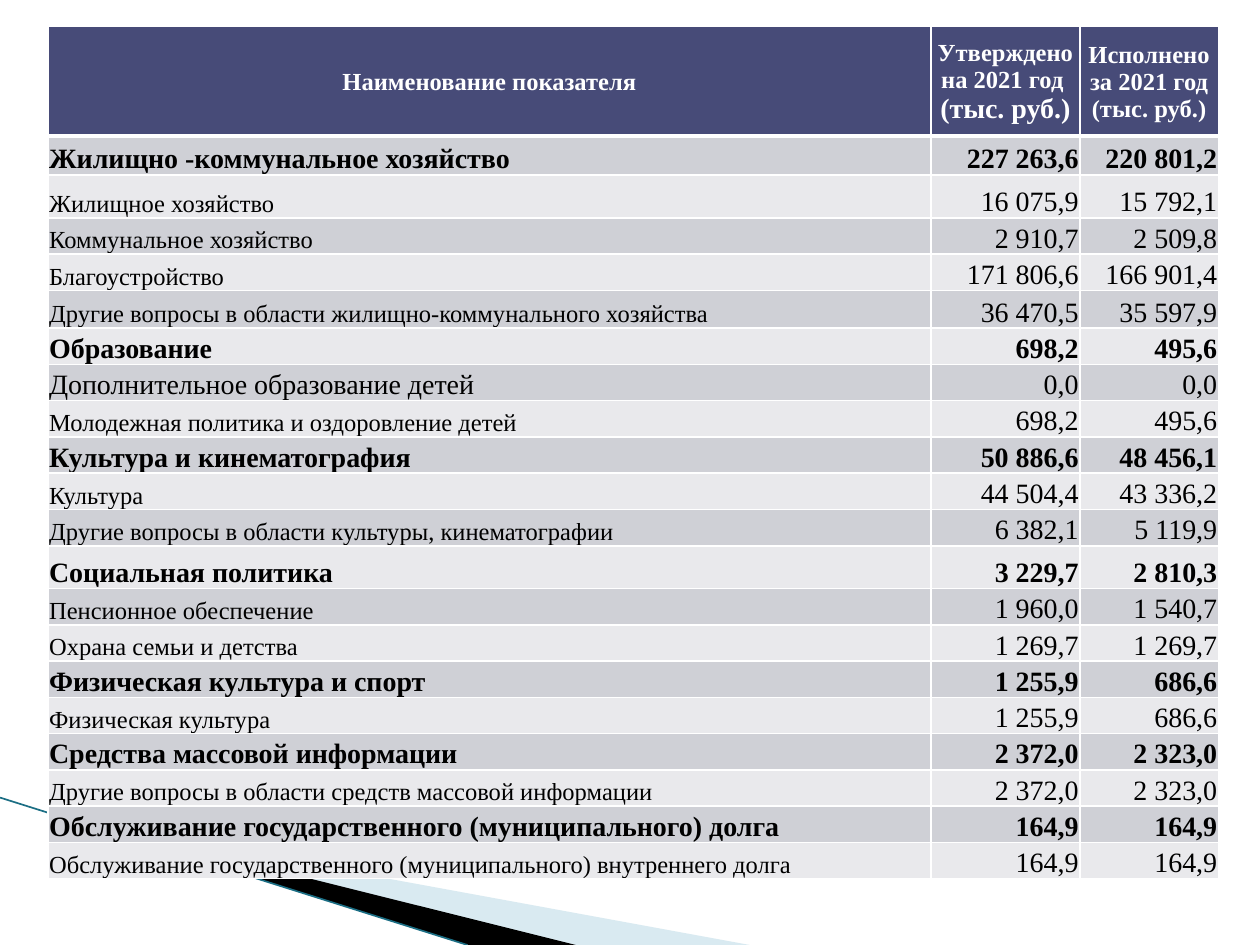
"""Build a slide with a budget spending table over a pointed corner motif."""
from dataclasses import dataclass

from lxml import etree
from pptx import Presentation, util as u
from pptx.dml.color import RGBColor
from pptx.enum import shapes, text
from pptx.oxml.ns import qn

FONT = "Times New Roman"
UNIT = u.Inches(0.1)
HUES = {"head": "474B78", "odd": "CFD0D6", "even": "E9E9EC", "white": "FFFFFF",
        "black": "000000", "pale": "A0CBDC", "teal": "1B6E84"}
WIDTHS = (70.1, 11.8, 11)
LEFT, TOP, TALL = 3.8, 2.1, 8.7


@dataclass
class Row:
    name: str
    plan: str
    fact: str
    bold: bool = False
    size: int = 14
    high: float = 2.88


@dataclass
class Wedge:
    hue: str
    dots: tuple
    alpha: int = 100


ROWS = [
    Row("Жилищно -коммунальное хозяйство", "227 263,6", "220 801,2", True, 16, 3.1),
    Row("Жилищное хозяйство", "16 075,9", "15 792,1", high=3.4),
    Row("Коммунальное хозяйство", "2 910,7", "2 509,8"),
    Row("Благоустройство", "171 806,6", "166 901,4"),
    Row("Другие вопросы в области жилищно-коммунального хозяйства",
        "36 470,5", "35 597,9", high=3),
    Row("Образование", "698,2", "495,6", True, 16),
    Row("Дополнительное образование детей", "0,0", "0,0", size=16),
    Row("Молодежная политика и оздоровление детей", "698,2", "495,6"),
    Row("Культура и кинематография", "50 886,6", "48 456,1", True, 16),
    Row("Культура", "44 504,4", "43 336,2"),
    Row("Другие вопросы в области культуры, кинематографии", "6 382,1", "5 119,9"),
    Row("Социальная политика", "3 229,7", "2 810,3", True, 16, 3.4),
    Row("Пенсионное обеспечение", "1 960,0", "1 540,7"),
    Row("Охрана семьи и детства", "1 269,7", "1 269,7"),
    Row("Физическая культура и спорт", "1 255,9", "686,6", True, 16),
    Row("Физическая культура", "1 255,9", "686,6"),
    Row("Средства массовой информации", "2 372,0", "2 323,0", True, 16),
    Row("Другие вопросы в области средств массовой информации", "2 372,0", "2 323,0"),
    Row("Обслуживание государственного (муниципального) долга",
        "164,9", "164,9", True, 16),
    Row("Обслуживание государственного (муниципального) внутреннего долга",
        "164,9", "164,9"),
]
WEDGES = [
    Wedge("pale", ((5.5, 65.1), (59.5, 75), (45.6, 75), (5.5, 65)), 40),
    Wedge("black", ((5.3, 64.9), (45.7, 75), (37.2, 75), (5.4, 65))),
]


def span(size: float) -> int:
    return round(size * UNIT)


def tint(hue: str) -> RGBColor:
    return RGBColor.from_string(HUES[hue])


def draw_wedge(slide, wedge: Wedge) -> None:
    dots = [(span(x), span(y)) for x, y in wedge.dots]
    pen = slide.shapes.build_freeform(*dots[0])
    pen.add_line_segments(dots[1:])
    shape = pen.convert_to_shape()
    shape.shadow.inherit = False
    shape.line.fill.background()
    shape.fill.solid()
    shape.fill.fore_color.rgb = tint(wedge.hue)
    if wedge.alpha < 100:
        hue = shape._element.spPr.find(".//" + qn("a:srgbClr"))
        etree.SubElement(hue, qn("a:alpha"), val=str(wedge.alpha * 1000))


def draw_edge(slide) -> None:
    edge = slide.shapes.add_connector(
        shapes.MSO_CONNECTOR.STRAIGHT, 0, span(63.3), span(37.1), span(75))
    edge.line.color.rgb = tint("teal")
    edge.line.width = u.Pt(0.95)
    etree.SubElement(edge._element.spPr, qn("a:effectLst"))


def style_cell(cell, hue: str, anchor, base: int = 1) -> None:
    cell.margin_left = cell.margin_right = cell.margin_top = u.Inches(0.01)
    cell.margin_bottom = 0
    cell.vertical_anchor = anchor
    props = cell._tc.get_or_add_tcPr()
    for side, wide in (("L", 1), ("R", 1), ("T", 1), ("B", base)):
        line = etree.SubElement(props, qn("a:ln" + side), w=str(u.Pt(wide)))
        fill = etree.SubElement(line, qn("a:solidFill"))
        etree.SubElement(fill, qn("a:srgbClr"), val=HUES["white"])
    cell.fill.solid()
    cell.fill.fore_color.rgb = tint(hue)


def set_font(para, size: int, bold: bool, hue: str, align) -> None:
    para.alignment = align
    para.font.name = FONT
    para.font.size = u.Pt(size)
    para.font.bold = bold
    para.font.color.rgb = tint(hue)


def fill_head(table) -> None:
    names = ("Наименование показателя", "Утверждено на 2021 год ",
             "Исполнено за 2021 год (тыс. руб.)")
    for cell, name in zip(table.rows[0].cells, names):
        style_cell(cell, "head", text.MSO_ANCHOR.MIDDLE, 3)
        para = cell.text_frame.paragraphs[0]
        para.add_run().text = name
        set_font(para, 14, True, "white", text.PP_ALIGN.CENTER)
    para = table.cell(0, 1).text_frame.paragraphs[0]
    para.add_line_break()
    run = para.add_run()
    run.text = "(тыс. руб.)"
    run.font.size = u.Pt(16)


def fill_row(table, num: int, row: Row) -> None:
    table.rows[num].height = span(row.high)
    items = ((row.name, row.size, text.PP_ALIGN.LEFT),
             (row.plan, 16, text.PP_ALIGN.RIGHT),
             (row.fact, 16, text.PP_ALIGN.RIGHT))
    for cell, (value, size, align) in zip(table.rows[num].cells, items):
        style_cell(cell, "odd" if num % 2 else "even", text.MSO_ANCHOR.BOTTOM,
                   1)
        para = cell.text_frame.paragraphs[0]
        para.add_run().text = value
        set_font(para, size, row.bold, "black", align)


def draw_table(slide) -> None:
    high = TALL + sum(row.high for row in ROWS)
    table = slide.shapes.add_table(
        len(ROWS) + 1, len(WIDTHS), span(LEFT), span(TOP),
        span(sum(WIDTHS)), span(high)).table
    for col, wide in zip(table.columns, WIDTHS):
        col.width = span(wide)
    table.rows[0].height = span(TALL)
    fill_head(table)
    for num, row in enumerate(ROWS, 1):
        fill_row(table, num, row)


def main() -> None:
    deck = Presentation()
    deck.slide_width, deck.slide_height = span(100), span(75)
    slide = deck.slides.add_slide(deck.slide_layouts[6])
    for wedge in WEDGES:
        draw_wedge(slide, wedge)
    draw_edge(slide)
    draw_table(slide)
    deck.save("out.pptx")


if __name__ == "__main__":
    main()
